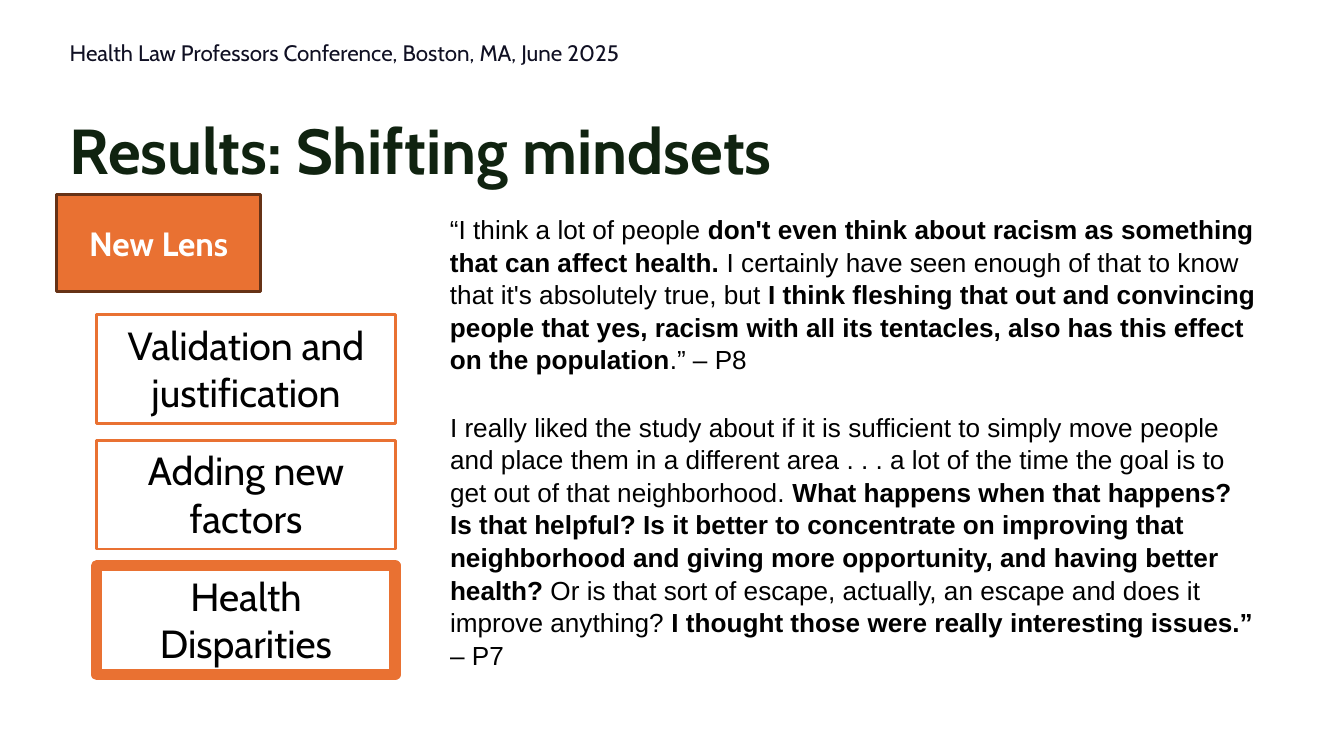
from dataclasses import dataclass

from pptx import Presentation
from pptx import util as u
from pptx.dml.color import RGBColor
from pptx.enum import shapes, text

PX = 4572


def px(n):
    return u.Emu(n * PX)


@dataclass(frozen=True)
class Theme:
    heading_font: str = "Cabin"
    body_font: str = "Arial"
    title: str = "102310"
    header: str = "101023"
    ink: str = "000000"
    white: str = "FFFFFF"
    accent: str = "E97132"
    accent_dark: str = "663216"
    title_size: int = 34
    label_size: int = 18
    topic_size: int = 21
    quote_size: int = 14
    header_size: int = 12


def write(tf, runs, *, font, size, color, bold=False, align=None,
          anchor=text.MSO_ANCHOR.TOP, inset=(20, 10), spacing=None,
          after=None, grow=False):
    tf.word_wrap = True
    tf.auto_size = (text.MSO_AUTO_SIZE.SHAPE_TO_FIT_TEXT if grow
                    else text.MSO_AUTO_SIZE.NONE)
    tf.vertical_anchor = anchor
    tf.margin_left = tf.margin_right = px(inset[0])
    tf.margin_top = tf.margin_bottom = px(inset[1])
    p = tf.paragraphs[0]
    p.alignment = align
    if spacing is not None:
        p.line_spacing = spacing
    if after is not None:
        p.space_after = u.Pt(after)
    if isinstance(runs, str):
        runs = [(runs, bold)]
    for words, strong in runs:
        r = p.add_run()
        r.text = words
        r.font.name = font
        r.font.size = u.Pt(size)
        r.font.bold = strong
        r.font.color.rgb = RGBColor.from_string(color)


class Deck:
    def __init__(self, theme, width, height):
        self.theme = theme
        self.prs = Presentation()
        self.prs.slide_width, self.prs.slide_height = px(width), px(height)
        self.s = self.prs.slides.add_slide(self.prs.slide_layouts[6])

    def text(self, box, runs, **fmt):
        sp = self.s.shapes.add_textbox(*map(px, box))
        write(sp.text_frame, runs, **fmt)

    def rect(self, box, words, *, fill, line, weight, **fmt):
        sp = self.s.shapes.add_shape(
            shapes.MSO_SHAPE.RECTANGLE, *map(px, box))
        sp.shadow.inherit = False
        sp.fill.solid()
        sp.fill.fore_color.rgb = RGBColor.from_string(fill)
        sp.line.color.rgb = RGBColor.from_string(line)
        sp.line.width = u.Pt(weight)
        write(sp.text_frame, words, font=self.theme.heading_font,
              align=text.PP_ALIGN.CENTER, **fmt)

    def topic(self, box, words, weight):
        t = self.theme
        self.rect(box, words, fill=t.white, line=t.accent, weight=weight,
                  size=t.topic_size, color=t.ink, grow=True)

    def quote(self, box, runs):
        t = self.theme
        self.text(box, runs, font=t.body_font, size=t.quote_size,
                  color=t.ink, spacing=1.04, grow=True)


def main():
    t = Theme()
    deck = Deck(t, 2000, 1125)
    deck.text((84, 154, 1832, 144), "Results: Shifting mindsets",
              font=t.heading_font, size=t.title_size, color=t.title,
              bold=True, anchor=text.MSO_ANCHOR.BOTTOM, inset=(20, 20))
    deck.text((84, 46, 916, 70),
              "Health Law Professors Conference, Boston, MA, June 2025",
              font=t.heading_font, size=t.header_size, color=t.header,
              anchor=text.MSO_ANCHOR.MIDDLE, inset=(20, 20),
              spacing=0.9, after=12)
    deck.rect((84, 290, 304, 144), "New Lens", fill=t.accent,
              line=t.accent_dark, weight=1.5, size=t.label_size,
              color=t.white, bold=True, anchor=text.MSO_ANCHOR.MIDDLE,
              inset=(20, 20))

    topics = [("Validation and justification", 1.5),
              ("Adding new factors", 1.5),
              ("Health Disparities", 6)]
    for i, (words, weight) in enumerate(topics):
        deck.topic((144, 468 + 187 * i, 444, 162), words, weight)

    deck.quote((650, 306, 1266, 256), [
        ("“I think a lot of people ", False),
        ("don't even think about racism as something that can affect "
         "health.", True),
        (" I certainly have seen enough of that to know that it's "
         "absolutely true, but ", False),
        ("I think fleshing that out and convincing people that yes, racism "
         "with all its tentacles, also has this effect on the population",
         True),
        (".” – P8", False),
    ])
    deck.quote((650, 600, 1242, 398), [
        ("I really liked the study about if it is sufficient to simply move "
         "people and place them in a different area . . . a lot of the time "
         "the goal is to get out of that neighborhood. ", False),
        ("What happens when that happens? Is that helpful? Is it better to "
         "concentrate on improving that neighborhood and giving more "
         "opportunity, and having better health?", True),
        (" Or is that sort of escape, actually, an escape and does it "
         "improve anything? ", False),
        ("I thought those were really interesting issues.” ", True),
        ("– P7", False),
    ])
    deck.prs.save("out.pptx")


if __name__ == "__main__":
    main()
